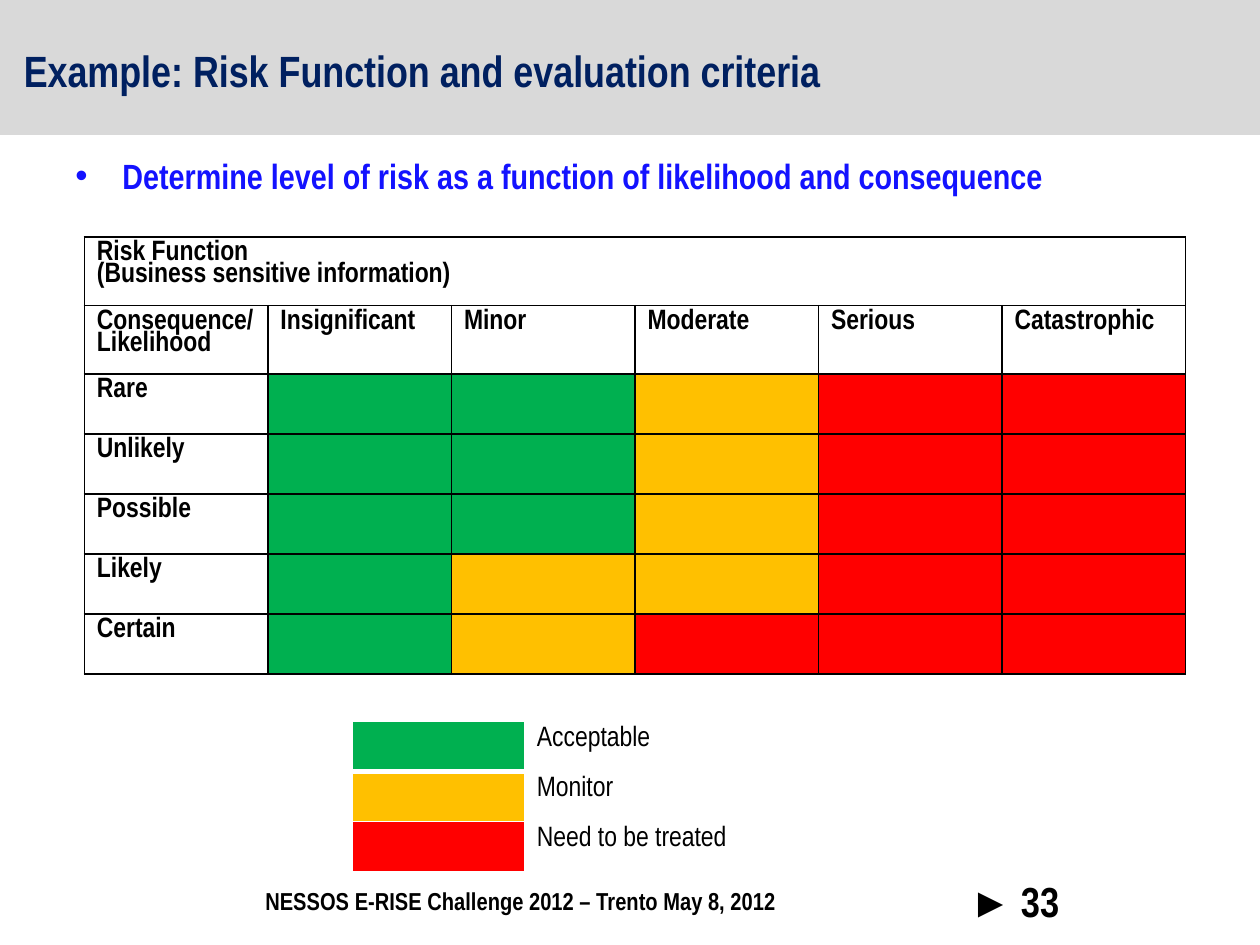
from lxml.etree import SubElement
from pptx import Presentation
from pptx.dml.color import RGBColor
from pptx.enum.shapes import MSO_SHAPE as Shape
from pptx.enum.text import MSO_ANCHOR as Anchor
from pptx.oxml.ns import qn
from pptx.util import Cm, Pt

COLORS = {
    "band": "D9D9D9", "title": "002060", "bullet": "1312FF",
    "black": "000000", "white": "FFFFFF",
    "G": "00B050", "Y": "FFC000", "R": "FF0000",
}
CONSEQUENCES = ["Insignificant", "Minor", "Moderate", "Serious", "Catastrophic"]
RISKS = {
    "Rare": "GGYRR", "Unlikely": "GGYRR", "Possible": "GGYRR",
    "Likely": "GYYRR", "Certain": "GYRRR",
}
LEGEND = {"G": "Acceptable", "Y": "Monitor", "R": "Need to be treated"}


def color(name):
    """Return the named colour."""
    return RGBColor.from_string(COLORS[name])


def write(frame, text, size=16, bold=True, ink="black", spacing=None, bullet=None):
    """Fill a text frame, one paragraph for each line of text."""
    frame.word_wrap = True
    for index, line in enumerate(text.split("\n")):
        para = frame.add_paragraph() if index else frame.paragraphs[0]
        para.line_spacing = spacing
        if bullet:
            props = para._p.get_or_add_pPr()
            props.set("marL", str(Cm(0.95)))
            props.set("indent", str(-Cm(0.95)))
            SubElement(props, qn("a:buFont"), typeface="Arial")
            SubElement(props, qn("a:buChar"), char=bullet)
        span = para.add_run()
        span.text = line
        span.font.name = "Arial Narrow"
        span.font.size = Pt(size)
        span.font.bold = bold
        span.font.color.rgb = color(ink)


def add_text(page, box, text, anchor=Anchor.TOP, **style):
    """Add a text box at a box given in centimetres."""
    frame = page.shapes.add_textbox(*map(Cm, box)).text_frame
    frame.vertical_anchor = anchor
    write(frame, text, **style)


def style_cell(cell, fill, edge, top=1, bottom=1):
    """Set the borders and the fill of a cell."""
    props = cell._tc.get_or_add_tcPr()
    for side, width in {"L": 1, "R": 1, "T": top, "B": bottom}.items():
        line = SubElement(props, qn(f"a:ln{side}"), w=str(Pt(width)))
        paint = SubElement(line, qn("a:solidFill"))
        SubElement(paint, qn("a:srgbClr"), val=COLORS[edge])
    cell.fill.solid()
    cell.fill.fore_color.rgb = color(fill)


def add_grid(page, box, widths, heights):
    """Add a plain table with the given column widths and row heights."""
    table = page.shapes.add_table(len(heights), len(widths), *map(Cm, box)).table
    table.first_row = table.horz_banding = False
    for column, width in zip(table.columns, widths):
        column.width = Cm(width)
    for row, height in zip(table.rows, heights):
        row.height = Cm(height)
    return table


def add_header(page, box):
    """Add the title band and its title."""
    left, top, width, height = box
    band = page.shapes.add_shape(Shape.RECTANGLE, *map(Cm, box))
    band.shadow.inherit = False
    band.fill.solid()
    band.fill.fore_color.rgb = color("band")
    band.line.fill.background()
    add_text(page, (left + 0.23, top + 0.61, width - 2.54, 1.75),
             "Example: Risk Function and evaluation criteria",
             anchor=Anchor.MIDDLE, size=25, ink="title")


def add_risk_matrix(page, box):
    """Add the matrix of likelihood against consequence."""
    width = box[2] / (len(CONSEQUENCES) + 1)
    table = add_grid(page, box, [width] * (len(CONSEQUENCES) + 1),
                     [1.31] * 2 + [1.21] * len(RISKS))
    for cell in table.iter_cells():
        style_cell(cell, "white", "black")
    table.cell(0, 0).merge(table.cell(0, len(CONSEQUENCES)))
    labels = {(0, 0): "Risk Function\n(Business sensitive information)",
              (1, 0): "Consequence/\nLikelihood"}
    labels.update({(1, column): name for column, name in enumerate(CONSEQUENCES, 1)})
    labels.update({(row, 0): name for row, name in enumerate(RISKS, 2)})
    for place, label in labels.items():
        write(table.cell(*place).text_frame, label, spacing=0.83)
    for row, levels in enumerate(RISKS.values(), 2):
        for column, level in enumerate(levels, 1):
            table.cell(row, column).fill.fore_color.rgb = color(level)


def add_legend(page, box):
    """Add the key to the risk levels."""
    swatch = 3.46
    table = add_grid(page, box, [swatch, box[2] - swatch],
                     [box[3] / len(LEGEND)] * len(LEGEND))
    for row, (level, label) in enumerate(LEGEND.items()):
        edges = {"top": 3 if row == 1 else 1, "bottom": 1 if row else 3}
        style_cell(table.cell(row, 0), level, "white", **edges)
        style_cell(table.cell(row, 1), "white", "white", **edges)
        write(table.cell(row, 1).text_frame, label, bold=False, spacing=0.9)


def add_footer(page, box):
    """Add the event line and the page number."""
    left, top, width, height = box
    add_text(page, (left, top + 0.2, 12.8, 0.86),
             "NESSOS E-RISE Challenge 2012 – Trento May 8, 2012", size=14)
    add_text(page, (left + 14.2, top, width - 14.2, height), "► 33", size=24)


def main():
    """Build and save the slide."""
    deck = Presentation()
    deck.slide_width, deck.slide_height = Cm(25.4), Cm(19.05)
    page = deck.slides.add_slide(deck.slide_layouts[6])
    add_header(page, (0, -0.08, 25.4, 2.8))
    add_text(page, (1.27, 2.98, 22.86, 1.2),
             "Determine level of risk as a function of likelihood and consequence",
             size=20, ink="bullet", bullet="•")
    add_risk_matrix(page, (1.7, 4.78, 22.2, 8.67))
    add_legend(page, (7.11, 14.53, 13.2, 2.55))
    add_footer(page, (5.1, 17.53, 19.48, 1.52))
    deck.save("out.pptx")


if __name__ == "__main__":
    main()
